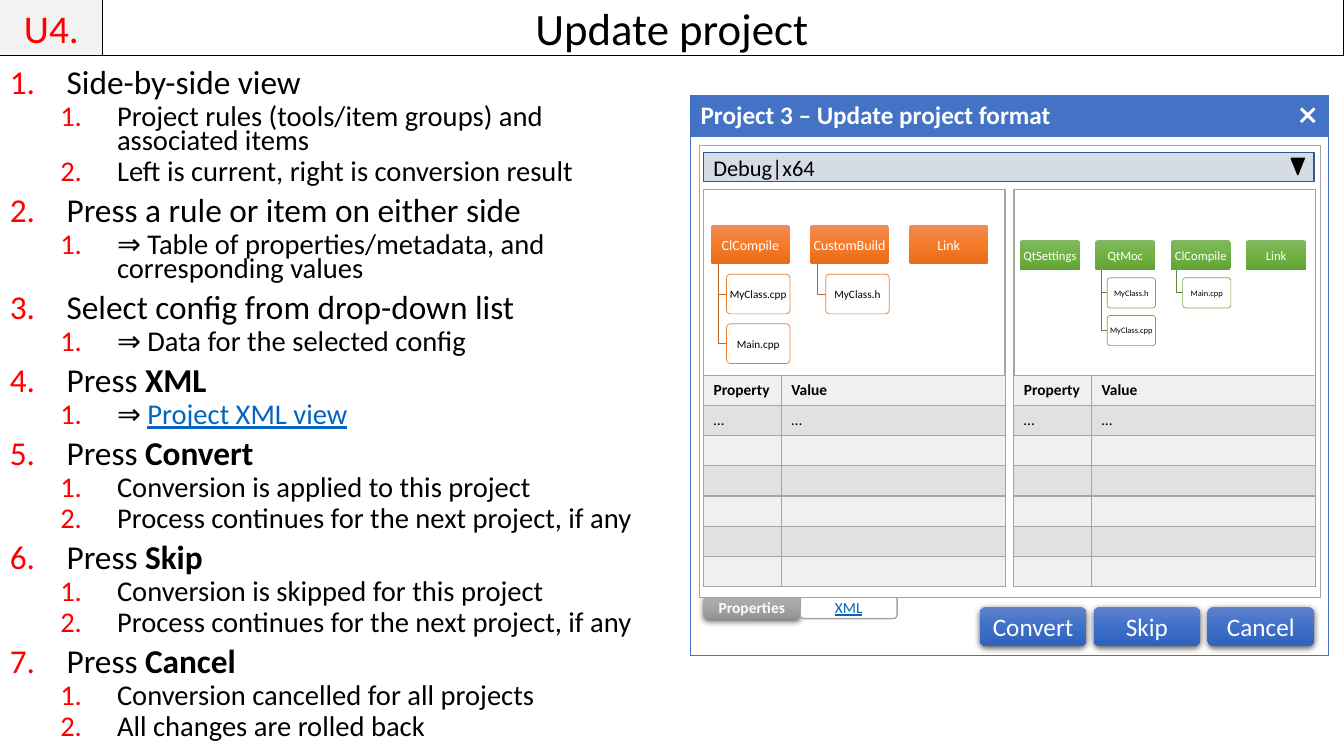
"""Build the "Update project" slide: numbered steps beside a dialog mock-up."""
import copy

import pptx
import pptx.dml.color
import pptx.enum.shapes
import pptx.enum.text
import pptx.oxml
import pptx.oxml.ns
import pptx.util

Cm, Pt = pptx.util.Cm, pptx.util.Pt
RGB = pptx.dml.color.RGBColor.from_string
SHAPE = pptx.enum.shapes.MSO_SHAPE
ALIGN = pptx.enum.text.PP_ALIGN
MIDDLE = pptx.enum.text.MSO_ANCHOR.MIDDLE
NS = pptx.oxml.ns.nsdecls("a")


class Theme:
    font = "Calibri"
    black, white, red, link = "000000", "FFFFFF", "FF0000", "0563C1"
    pale, config, config_line = "F2F2F2", "D6DCE5", "325491"
    blue, grey, orange, green = "4472C4", "A5A5A5", "ED7D31", "70AD47"
    orange_line, green_line = "BE6427", "5A8B39"
    blue_fade = ("6183CB", "3E70CA", "3062BB")
    grey_fade = ("AFAFAF", "A5A5A5", "939393")
    orange_fade = ("F18C57", "F67B28", "E56C19")
    green_fade = ("81B861", "6FB242", "62A336")
    bands = ("F0F0F0", "E1E1E1")
    title, unit, button, config_text, small = 32, 28, 18, 16, 11
    steps = (23.8, 20.4)


deck = pptx.Presentation()
deck.slide_width, deck.slide_height = Cm(33.87), Cm(19.05)
page = deck.slides.add_slide(deck.slide_layouts[6])


def add_box(kind, left, top, width, height, fill=None, line=None, weight=1, text="",
            size=11, color=Theme.black, align=ALIGN.CENTER, margin=0.25, shadow=False):
    box = page.shapes.add_shape(kind, Cm(left), Cm(top), Cm(width), Cm(height))
    box.shadow.inherit = False
    properties = box._element.spPr
    if isinstance(fill, tuple):
        box.fill.gradient()
        box.fill.gradient_angle = 270
        stops = properties.find(".//" + pptx.oxml.ns.qn("a:gsLst"))
        stops.insert(1, copy.deepcopy(stops[0]))
        for index, stop in enumerate(box.fill.gradient_stops):
            stop.color.rgb = RGB(fill[index])
            stop.position = index / 2
    elif fill:
        box.fill.solid()
        box.fill.fore_color.rgb = RGB(fill)
    else:
        box.fill.background()
    if line:
        box.line.color.rgb = RGB(line)
        box.line.width = Pt(weight)
    else:
        box.line.fill.background()
    if shadow:
        properties.find(pptx.oxml.ns.qn("a:effectLst")).append(pptx.oxml.parse_xml(
            f'<a:outerShdw {NS} blurRad="57150" dist="19050" dir="5400000" algn="ctr" '
            f'rotWithShape="0"><a:srgbClr val="{Theme.black}"><a:alpha val="63000"/>'
            '</a:srgbClr></a:outerShdw>'))
    if text:
        frame = box.text_frame
        frame.word_wrap = True
        frame.vertical_anchor = MIDDLE
        frame.margin_left = frame.margin_right = Cm(margin)
        frame.margin_top = frame.margin_bottom = Cm(0.03)
        para = frame.paragraphs[0]
        para.text, para.alignment = text, align
        para.font.name, para.font.size = Theme.font, Pt(size)
        para.font.color.rgb = RGB(color)
    return box


def style_cell(cell, text, size, color, bold, fill, border, weight):
    for side in "LRTB":
        cell._tc.get_or_add_tcPr().append(pptx.oxml.parse_xml(
            f'<a:ln{side} {NS} w="{Pt(weight)}"><a:solidFill><a:srgbClr val="{border}"/>'
            f'</a:solidFill></a:ln{side}>'))
    cell.fill.solid()
    cell.fill.fore_color.rgb = RGB(fill)
    para = cell.text_frame.paragraphs[0]
    if text:
        para.text = text
    para.font.name, para.font.size, para.font.bold = Theme.font, Pt(size), bold
    para.font.color.rgb = RGB(color)


window = page.shapes.add_table(2, 1, Cm(17.4), Cm(2.41), Cm(16.08), Cm(14.11)).table
window.first_row = window.horz_banding = False
window.rows[0].height, window.rows[1].height = Cm(1.03), Cm(13.08)
style_cell(window.cell(0, 0), "Project 3 – Update project format", Theme.button,
           Theme.white, True, Theme.blue, Theme.blue, 0.5)
window.cell(0, 0).vertical_anchor = MIDDLE
style_cell(window.cell(1, 0), "", Theme.button, Theme.black, False,
           Theme.white, Theme.blue, 0.5)

properties_tab = add_box(SHAPE.ROUNDED_RECTANGLE, 17.73, 15.01, 2.44, 0.58, Theme.grey_fade,
                         text="Properties", color=Theme.white, shadow=True)
properties_tab.text_frame.paragraphs[0].font.bold = True
xml_tab = add_box(SHAPE.ROUNDED_RECTANGLE, 20.17, 15.01, 2.44, 0.58, Theme.white, Theme.grey,
                  text="XML", color=Theme.link)
xml_tab.text_frame.paragraphs[0].font.underline = True
add_box(SHAPE.RECTANGLE, 17.63, 3.66, 15.65, 11.4, Theme.white, Theme.grey)

add_box(SHAPE.RECTANGLE, 0, 0, 33.87, 1.4, None, Theme.black, 0.75,
        "Update project", Theme.title)
add_box(SHAPE.RECTANGLE, 0, 0, 2.59, 1.4, Theme.pale, Theme.black, 0.75,
        "U4.", Theme.unit, Theme.red)

for index, caption in enumerate(("Convert", "Skip", "Cancel")):
    add_box(SHAPE.ROUNDED_RECTANGLE, 24.69 + 2.87 * index, 15.29, 2.69, 0.99, Theme.blue_fade,
            text=caption, size=Theme.button, color=Theme.white, shadow=True)

current = (("ClCompile", ("MyClass.cpp", "Main.cpp")), ("CustomBuild", ("MyClass.h",)),
           ("Link", ()))
converted = (("QtSettings", ()), ("QtMoc", ("MyClass.h", "MyClass.cpp")),
             ("ClCompile", ("Main.cpp",)), ("Link", ()))
sides = (
    (17.73, 17.91, 5.66, 1.0, current, Theme.orange_fade, Theme.orange, Theme.orange_line, 10, 8),
    (25.55, 25.7, 6.05, 0.76, converted, Theme.green_fade, Theme.green, Theme.green_line, 9, 6),
)
for panel, left, top, height, rules, fade, edge, branch, rule_size, item_size in sides:
    add_box(SHAPE.RECTANGLE, panel, 4.78, 7.6, 9.98, None, Theme.grey)
    width = 2 * height
    for column, (rule, items) in enumerate(rules):
        x = left + 1.25 * width * column
        node = add_box(SHAPE.ROUNDED_RECTANGLE, x, top, width, height, fade, text=rule,
                       size=rule_size, color=Theme.white, margin=0.03)
        node.adjustments[0] = 0.1
        for row, item in enumerate(items, 1):
            y = top + 1.25 * height * row
            trunk, middle = Cm(x + 0.1 * width), Cm(y + height / 2)
            elbow = page.shapes.build_freeform(trunk, Cm(top + height))
            elbow.add_line_segments(((trunk, middle), (Cm(x + 0.2 * width), middle)), close=False)
            elbow = elbow.convert_to_shape()
            elbow.shadow.inherit = False
            elbow.fill.background()
            elbow.line.color.rgb, elbow.line.width = RGB(branch), Pt(0.5)
            leaf = add_box(SHAPE.ROUNDED_RECTANGLE, x + 0.2 * width, y, 0.8 * width, height,
                           Theme.white, edge, 0.5, item, item_size, margin=0.03)
            leaf.adjustments[0] = 0.1

    grid = page.shapes.add_table(7, 2, Cm(panel), Cm(9.46), Cm(7.6), Cm(5.32)).table
    grid.first_row = grid.horz_banding = False
    grid.columns[0].width, grid.columns[1].width = Cm(1.96), Cm(5.64)
    texts = [("Property", "Value"), ("…", "…")] + [("", "")] * 5
    for row, pair in enumerate(texts):
        grid.rows[row].height = Cm(0.76)
        for column, text in enumerate(pair):
            style_cell(grid.cell(row, column), text, Theme.small, Theme.black, row == 0,
                       Theme.bands[row % 2], Theme.grey, 1)

add_box(SHAPE.RECTANGLE, 17.73, 3.84, 15.39, 0.74, Theme.config, Theme.config_line,
        text="Debug|x64", size=Theme.config_text, align=ALIGN.LEFT)
arrow = add_box(SHAPE.ISOSCELES_TRIANGLE, 32.54, 3.99, 0.33, 0.41, Theme.black, Theme.black)
arrow.rotation = 180
close_mark = add_box(SHAPE.CROSS, 32.69, 2.64, 0.53, 0.53, Theme.white, Theme.blue)
close_mark.rotation = 45
close_mark.adjustments[0] = 0.389

steps = (
    (0, "Side-by-side view", ""),
    (1, "Project rules (tools/item groups) and associated items", ""),
    (1, "Left is current, right is conversion result", ""),
    (0, "Press a rule or item on either side", ""),
    (1, "⇒ Table of properties/metadata, and corresponding values", ""),
    (0, "Select config from drop-down list", ""),
    (1, "⇒ Data for the selected config", ""),
    (0, "Press ", "XML"),
    (1, "⇒ ", "Project XML view"),
    (0, "Press ", "Convert"),
    (1, "Conversion is applied to this project", ""),
    (1, "Process continues for the next project, if any", ""),
    (0, "Press ", "Skip"),
    (1, "Conversion is skipped for this project", ""),
    (1, "Process continues for the next project, if any", ""),
    (0, "Press ", "Cancel"),
    (1, "Conversion cancelled for all projects", ""),
    (1, "All changes are rolled back", ""),
)
frame = page.shapes.add_textbox(0, Cm(1.7), Cm(16.94), Cm(17.35)).text_frame
frame.word_wrap = True
for index, (level, plain, marked) in enumerate(steps):
    para = frame.add_paragraph() if index else frame.paragraphs[0]
    para.level = level
    para.line_spacing, para.space_before = 0.7, Pt(5 if level else 10)
    properties = para._p.get_or_add_pPr()
    properties.set("marL", str(Cm(2.7 if level else 1.43)))
    properties.set("indent", str(-Cm(1.43)))
    for bullet in (f'<a:buClr {NS}><a:srgbClr val="{Theme.red}"/></a:buClr>',
                   f'<a:buAutoNum {NS} type="arabicPeriod"/>'):
        properties.append(pptx.oxml.parse_xml(bullet))
    para.font.name, para.font.size = Theme.font, Pt(Theme.steps[level])
    para.font.color.rgb = RGB(Theme.black)
    para.add_run().text = plain
    if marked:
        span = para.add_run()
        span.text = marked
        if level:
            span.font.underline = True
            span.font.color.rgb = RGB(Theme.link)
        else:
            span.font.bold = True

deck.save("out.pptx")
